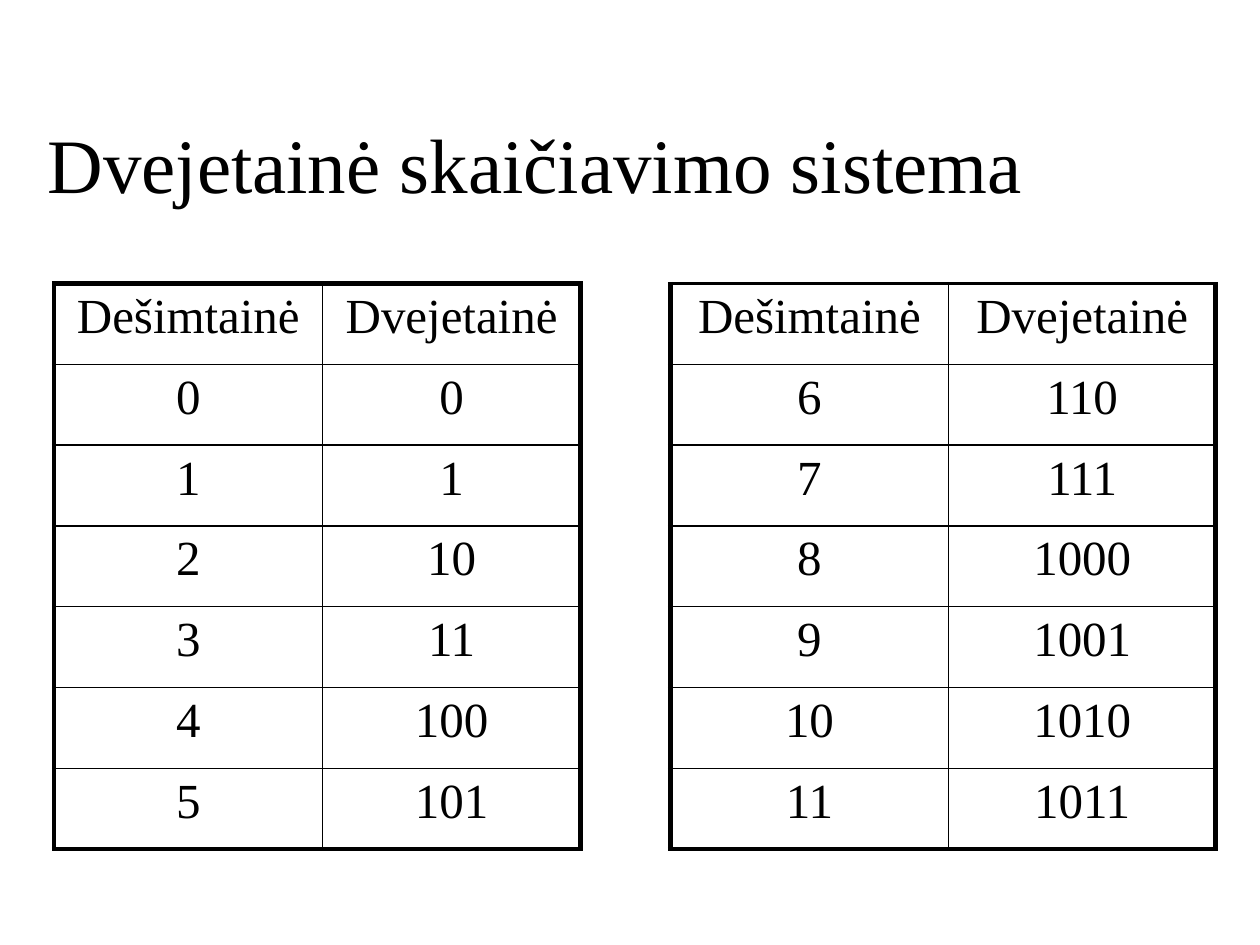
from dataclasses import dataclass

from lxml.etree import SubElement
from pptx import Presentation
from pptx.dml.color import RGBColor
from pptx.enum.text import MSO_ANCHOR, PP_ALIGN
from pptx.oxml.ns import qn
from pptx.util import Inches, Pt


@dataclass(frozen=True)
class Theme:
    font: str = "Times New Roman"
    ink: str = "000000"
    title_size: float = 44
    cell_size: float = 28
    frame: float = 3
    header_top_right: float = 2.25
    grid: float = 1


@dataclass(frozen=True)
class NumberBlock:
    """One framed pair of columns: numbers in decimal and in binary."""
    first_column: int
    numbers: range
    top_width: float


THEME = Theme()
HEADINGS = ("Dešimtainė", "Dvejetainė")
BLOCKS = (
    NumberBlock(0, range(0, 6), THEME.frame),
    NumberBlock(3, range(6, 12), THEME.header_top_right),
)
GAP_COLUMN = 2
COLUMN_WIDTHS = (2.13, 2.05, 0.71, 2.21, 2.12)
ROW_COUNT = 7
TABLE_HEIGHT = 4.49


def write(text_frame, text: str, size: float) -> None:
    """Write one centred run in the theme font."""
    paragraph = text_frame.paragraphs[0]
    paragraph.alignment = PP_ALIGN.CENTER
    run = paragraph.add_run()
    run.text = text
    run.font.name = THEME.font
    run.font.size = Pt(size)
    run.font.color.rgb = RGBColor.from_string(THEME.ink)


def style_cell(cell, left: float, right: float, top: float, bottom: float) -> None:
    """Set the four border widths (0 is no line) and clear the fill."""
    properties = cell._tc.get_or_add_tcPr()
    for side, width in zip("LRTB", (left, right, top, bottom)):
        line = SubElement(properties, qn(f"a:ln{side}"), w=str(Pt(width)))
        if width:
            fill = SubElement(line, qn("a:solidFill"))
            SubElement(fill, qn("a:srgbClr"), val=THEME.ink)
        else:
            SubElement(line, qn("a:noFill"))
    cell.fill.background()


def fill_block(table, block: NumberBlock) -> None:
    """Fill a pair of columns and frame it with a heavy outline."""
    rows = [HEADINGS] + [(str(n), f"{n:b}") for n in block.numbers]
    for row, texts in enumerate(rows):
        for side, text in enumerate(texts):
            cell = table.cell(row, block.first_column + side)
            write(cell.text_frame, text, THEME.cell_size)
            style_cell(
                cell,
                left=THEME.grid if side else THEME.frame,
                right=THEME.frame if side else THEME.grid,
                top=THEME.grid if row else block.top_width,
                bottom=THEME.frame if row == ROW_COUNT - 1 else THEME.grid,
            )


def main() -> None:
    presentation = Presentation()
    presentation.slide_width = Inches(10)
    presentation.slide_height = Inches(7.5)
    slide = presentation.slides.add_slide(presentation.slide_layouts[5])

    # Title
    title = slide.shapes.title
    title.left, title.top = Inches(0), Inches(0.67)
    title.width, title.height = Inches(8.5), Inches(1.25)
    title.text_frame.vertical_anchor = MSO_ANCHOR.MIDDLE
    write(title.text_frame, "Dvejetainė skaičiavimo sistema", THEME.title_size)

    # Number table: two framed blocks with an open column between them
    table = slide.shapes.add_table(
        ROW_COUNT, len(COLUMN_WIDTHS), Inches(0.43), Inches(2.25),
        Inches(sum(COLUMN_WIDTHS)), Inches(TABLE_HEIGHT),
    ).table
    table.first_row = False
    table.horz_banding = False
    for column, width in zip(table.columns, COLUMN_WIDTHS):
        column.width = Inches(width)
    for block in BLOCKS:
        fill_block(table, block)
    for row in range(ROW_COUNT):
        style_cell(table.cell(row, GAP_COLUMN), THEME.frame, THEME.frame, 0, 0)

    presentation.save("out.pptx")


if __name__ == "__main__":
    main()
